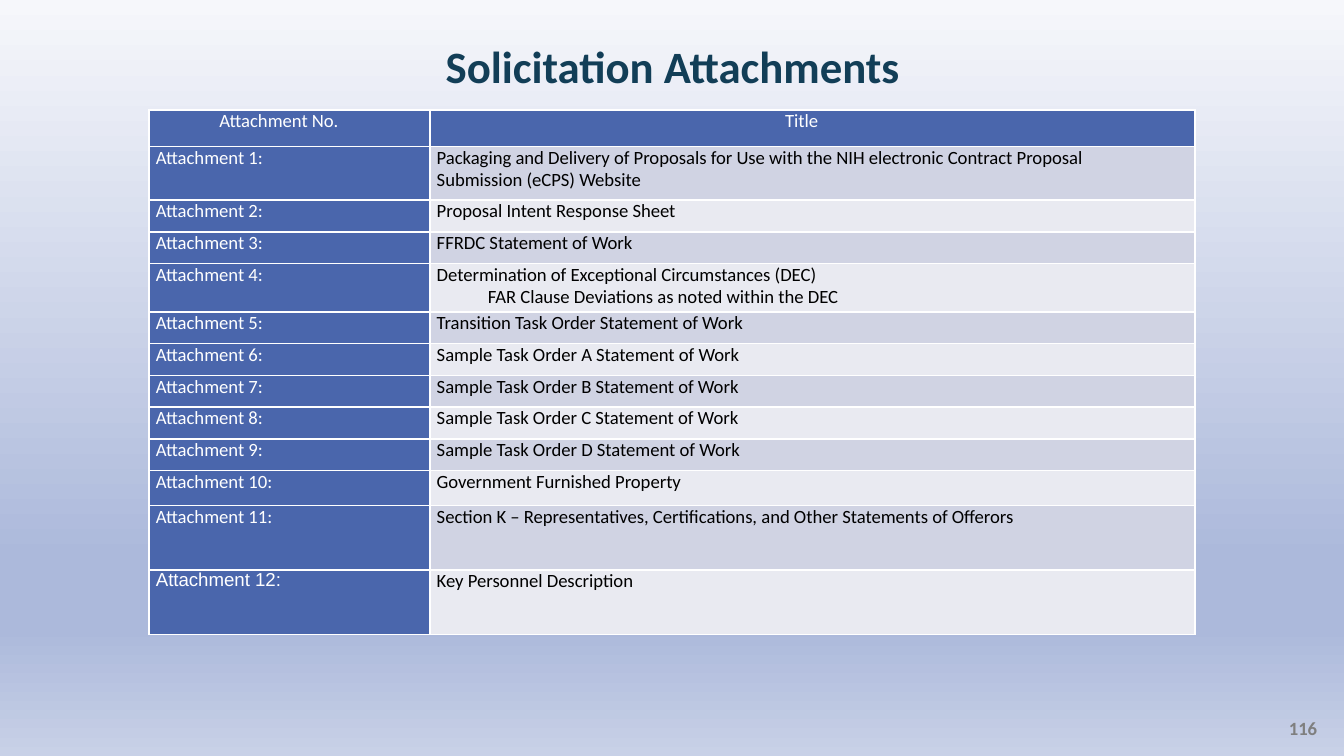
"""Build the solicitation attachments slide."""
from lxml.etree import SubElement
from pptx import Presentation
from pptx.dml.color import RGBColor
from pptx.enum.text import MSO_ANCHOR as Anchor, PP_ALIGN as Align
from pptx.oxml.ns import qn
from pptx.util import Inches, Pt

NAVY = RGBColor(0x12, 0x3E, 0x57)
BLUE = RGBColor(0x4A, 0x66, 0xAC)
GRAY = RGBColor(0x7F, 0x7F, 0x7F)
WHITE = RGBColor(0xFF, 0xFF, 0xFF)
BLACK = RGBColor(0, 0, 0)
BANDS = RGBColor(0xD0, 0xD3, 0xE3), RGBColor(0xE9, 0xEA, 0xF1)
SKY = [
    (0, RGBColor(0xF6, 0xF7, 0xFB)),
    (74, RGBColor(0xAC, 0xB9, 0xDB)),
    (83, RGBColor(0xAC, 0xB9, 0xDB)),
    (100, RGBColor(0xC8, 0xD1, 0xE7)),
]

SLIDE_WIDTH = 10
COLUMN_WIDTHS = 2.09, 5.69
HEADER_HEIGHT = 0.27
LINE_HEIGHT = 17 / 72
HEADINGS = "Attachment No.", "Title"
ATTACHMENTS = [
    (0.4, ["Packaging and Delivery of Proposals for Use with the NIH electronic "
           "Contract Proposal Submission (eCPS) Website"]),
    (LINE_HEIGHT, ["Proposal Intent Response Sheet"]),
    (LINE_HEIGHT, ["FFRDC Statement of Work"]),
    (0.36, ["Determination of Exceptional Circumstances (DEC)",
            "FAR Clause Deviations as noted within the DEC"]),
    (LINE_HEIGHT, ["Transition Task Order Statement of Work"]),
    *[(LINE_HEIGHT, [f"Sample Task Order {letter} Statement of Work"]) for letter in "ABCD"],
    (0.26, ["Government Furnished Property"]),
    (0.48, ["Section K – Representatives, Certifications, and Other Statements of Offerors"]),
    (0.48, ["Key Personnel Description"]),
]


def paint_background(slide):
    fill = slide.background.fill
    fill.gradient()
    fill.gradient_angle = 270
    stops = slide.background._cSld.find(".//" + qn("a:gsLst"))
    for stop in list(stops):
        stops.remove(stop)
    for percent, color in SKY:
        stop = SubElement(stops, qn("a:gs"), pos=str(percent * 1000))
        SubElement(stop, qn("a:srgbClr"), val=str(color))


def add_run(paragraph, text, size, color, bold=False, font_name="Calibri"):
    run = paragraph.add_run()
    run.text = text
    font = run.font
    font.name, font.size, font.bold = font_name, Pt(size), bold
    font.color.rgb = color


def add_label(slide, place, text, size, color, align, anchor, spacing):
    frame = slide.shapes.add_textbox(*map(Inches, place)).text_frame
    frame.word_wrap = True
    frame.vertical_anchor = anchor
    frame.margin_left = frame.margin_right = frame.margin_top = frame.margin_bottom = 0
    paragraph = frame.paragraphs[0]
    paragraph.alignment = align
    paragraph.line_spacing = spacing
    add_run(paragraph, text, size, color, bold=True)


def outline_cell(cell):
    properties = cell._tc.get_or_add_tcPr()
    for side in ("lnL", "lnR", "lnT", "lnB"):
        line = SubElement(properties, qn(f"a:{side}"), w=str(Pt(1)))
        solid = SubElement(line, qn("a:solidFill"))
        SubElement(solid, qn("a:srgbClr"), val=str(WHITE))


def fill_cell(cell, lines, fill, color, align=Align.LEFT, font_name="Calibri"):
    cell.margin_left = cell.margin_right = Inches(0.05)
    cell.margin_top = cell.margin_bottom = 0
    outline_cell(cell)
    cell.fill.solid()
    cell.fill.fore_color.rgb = fill
    frame = cell.text_frame
    for index, line in enumerate(lines):
        paragraph = frame.add_paragraph() if index else frame.paragraphs[0]
        paragraph.alignment = align
        indents = paragraph._p.get_or_add_pPr()
        indents.set("marR", str(Inches(0.16)))
        if index:
            indents.set("marL", str(Inches(0.38)))
        add_run(paragraph, line, 10, color, font_name=font_name)


def add_attachment_table(slide):
    heights = [HEADER_HEIGHT] + [height for height, _ in ATTACHMENTS]
    table = slide.shapes.add_table(
        len(heights), len(COLUMN_WIDTHS), Inches(1.11), Inches(0.82),
        Inches(sum(COLUMN_WIDTHS)), Inches(sum(heights))).table
    table.first_row = table.horz_banding = False
    for column, width in zip(table.columns, COLUMN_WIDTHS):
        column.width = Inches(width)
    for row, height in zip(table.rows, heights):
        row.height = Inches(height)
    for index, heading in enumerate(HEADINGS):
        fill_cell(table.cell(0, index), [heading], BLUE, WHITE, Align.CENTER)
    for number, (_, titles) in enumerate(ATTACHMENTS, 1):
        number_font = "Arial" if number == len(ATTACHMENTS) else "Calibri"
        fill_cell(table.cell(number, 0), [f"Attachment {number}:"], BLUE, WHITE,
                  font_name=number_font)
        fill_cell(table.cell(number, 1), titles, BANDS[(number - 1) % 2], BLACK)


def main():
    deck = Presentation()
    deck.slide_width = Inches(SLIDE_WIDTH)
    deck.slide_height = Inches(SLIDE_WIDTH * 9 / 16)
    slide = deck.slides.add_slide(deck.slide_layouts[6])
    paint_background(slide)
    add_label(slide, (9.46, 5.33, 0.34, 0.2), "116", 10, GRAY, Align.RIGHT, Anchor.TOP, 1.01)
    add_label(slide, (0.54, 0.34, 8.93, 0.35), "Solicitation Attachments", 24, NAVY,
              Align.CENTER, Anchor.BOTTOM, 0.9)
    add_attachment_table(slide)
    deck.save("out.pptx")


if __name__ == "__main__":
    main()
